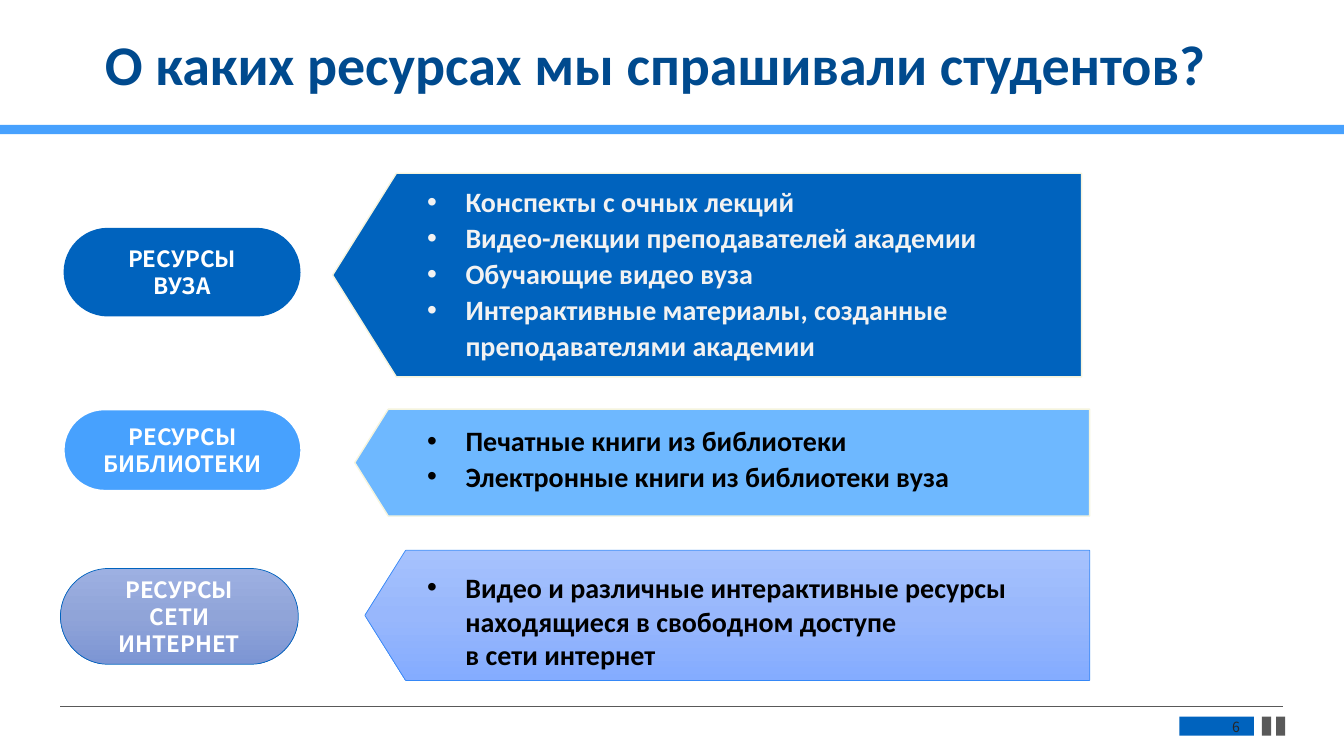
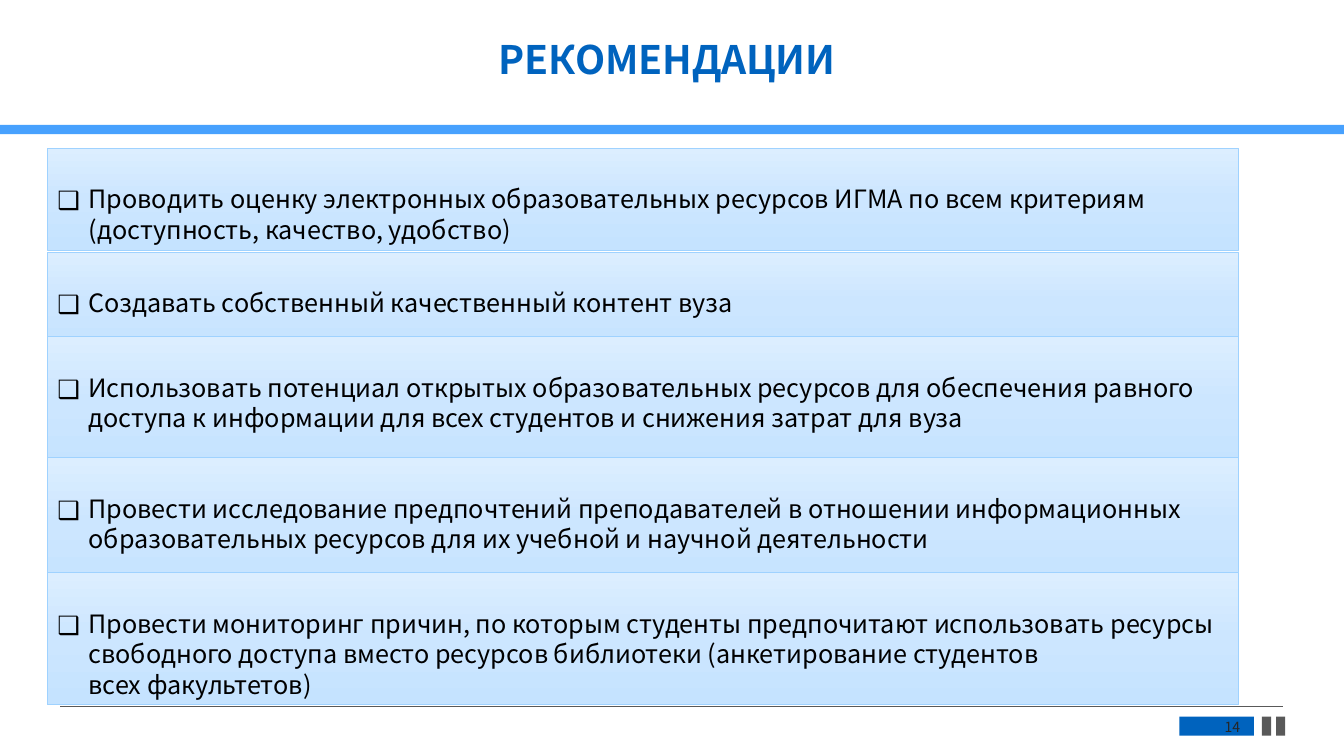
"""Two slides on study resources: what was asked and what is advised."""
from copy import deepcopy
from dataclasses import dataclass

from lxml.etree import SubElement as sub
from pptx import Presentation
from pptx.dml.color import RGBColor
from pptx.enum.shapes import MSO_CONNECTOR as Line, MSO_SHAPE as Kind
from pptx.enum.text import MSO_ANCHOR as Anchor, PP_ALIGN as Align
from pptx.oxml.ns import qn
from pptx.util import Inches, Pt

WIDE, HIGH = Inches(13.333), Inches(7.5)
SANS, BODY = "Noto Sans CJK SC", "Calibri"
BLUE, SKY, NAVY, PALE = "0063BE", "47A1FE", "004A8E", "6EB8FF"
GRAY, DARK, WHITE, BLACK = "595959", "262626", "FFFFFF", "000000"
CREAM = "F5F4DD"
PITCH = 1.21


@dataclass(frozen=True)
class Box:
    """Place and size in percent of the slide's width and height."""
    x: float
    y: float
    w: float
    h: float

    def emu(self) -> tuple[int, int, int, int]:
        return (across(self.x), down(self.y), across(self.w), down(self.h))


@dataclass(frozen=True)
class Look:
    """Fill (one colour or three gradient stops) and outline."""
    fill: str | tuple[str, ...]
    line: str | None = None
    width: float = 1


@dataclass(frozen=True)
class Group:
    """One kind of resource: pill, arrow and list."""
    pill: Box
    tone: Look
    name: tuple[str, ...]
    arrow: Box
    look: Look
    area: Box
    items: tuple[str, ...]
    color: str = BLACK
    space: float = 1.07


@dataclass(frozen=True)
class Card:
    """One piece of advice with its top and height."""
    y: float
    h: float
    text: str


GROUPS = (
    Group(Box(4.73, 30.13, 17.63, 11.73), Look(BLUE), ("РЕСУРСЫ", "ВУЗА"),
          Box(24.75, 22.93, 55.73, 26.93), Look(BLUE, CREAM),
          Box(31.05, 23.47, 50, 25.33),
          ("Конспекты с очных лекций",
           "Видео-лекции преподавателей академии",
           "Обучающие видео вуза",
           "Интерактивные материалы, созданные преподавателями академии"),
          "F2F2F2"),
    Group(Box(4.73, 54.13, 17.7, 10.8), Look(SKY, WHITE, 1.5),
          ("РЕСУРСЫ", "БИБЛИОТЕКИ"),
          Box(26.4, 54.13, 54.68, 14.13), Look(PALE, CREAM),
          Box(31.05, 55.07, 50, 10.93),
          ("Печатные книги из библиотеки",
           "Электронные книги из библиотеки вуза")),
    Group(Box(4.5, 75.2, 17.7, 12.67),
          Look(("9DB0E2", "90A4D8", "7C95D4"), BLUE, 0.5),
          ("РЕСУРСЫ", "СЕТИ", "ИНТЕРНЕТ"),
          Box(27.15, 72.8, 53.93, 17.2),
          Look(("A6C2FD", "98B7FC", "84ACFF"), "3688F7", 0.5),
          Box(31.05, 74.8, 51.75, 14.8),
          ("Видео и различные интерактивные ресурсы находящиеся "
           "в свободном доступе\vв сети интернет",), space=1),
)

CARDS = (
    Card(19.6, 13.47, "Проводить оценку электронных образовательных ресурсов "
         "ИГМА по всем критериям (доступность, качество, удобство)"),
    Card(33.33, 13.47, "Создавать собственный качественный контент вуза"),
    Card(44.53, 17.47, "Использовать потенциал открытых образовательных "
         "ресурсов для обеспечения равного доступа к информации для всех "
         "студентов и снижения затрат для вуза"),
    Card(60.53, 17.47, "Провести исследование предпочтений преподавателей "
         "в отношении информационных образовательных ресурсов для их "
         "учебной и научной деятельности"),
    Card(75.73, 17.47, "Провести мониторинг причин, по которым студенты "
         "предпочитают использовать ресурсы свободного доступа вместо "
         "ресурсов библиотеки (анкетирование студентов\vвсех факультетов)"),
)
ICE = Look(("DCEEFF", "CCE6FF", "C5E3FF"), "9FD2FF", 0.5)


def across(part: float) -> int:
    return round(WIDE * part / 100)


def down(part: float) -> int:
    return round(HIGH * part / 100)


def rgb(code: str) -> RGBColor:
    return RGBColor.from_string(code)


def paint(shape, look: Look) -> None:
    fill = shape.fill
    if isinstance(look.fill, str):
        fill.solid()
        fill.fore_color.rgb = rgb(look.fill)
    else:
        fill.gradient()
        fill.gradient_angle = 270
        stops = shape._element.spPr.find(qn("a:gradFill")).find(qn("a:gsLst"))
        stops.insert(1, deepcopy(stops[0]))
        for num, (stop, code) in enumerate(zip(fill.gradient_stops, look.fill)):
            stop.position = num / 2
            stop.color.rgb = rgb(code)
    if look.line:
        shape.line.color.rgb = rgb(look.line)
        shape.line.width = Pt(look.width)
    else:
        shape.line.fill.background()


def form(slide, kind: Kind, box: Box, look: Look, bend: float | None = None):
    shape = slide.shapes.add_shape(kind, *box.emu())
    shape.shadow.inherit = False
    paint(shape, look)
    if bend is not None:
        shape.adjustments[0] = bend
    return shape


def mark(para, sign: str, hang: float) -> None:
    props = para._p.get_or_add_pPr()
    props.set("marL", str(Inches(hang)))
    props.set("indent", str(-Inches(hang)))
    sub(props, qn("a:buFont")).set("typeface", "Arial" if sign == "•" else SANS)
    sub(props, qn("a:buChar")).set("char", sign)


def write(shape, *lines: str, size: float, color: str, font: str = SANS,
          bold: bool = False, align: Align = Align.LEFT,
          anchor: Anchor = Anchor.TOP, sign: str = "", hang: float = 0,
          space: float = 1, top: float = 0.05) -> None:
    frame = shape.text_frame
    frame.word_wrap = True
    frame.vertical_anchor = anchor
    frame.margin_top = Inches(top)
    for num, line in enumerate(lines):
        para = frame.add_paragraph() if num else frame.paragraphs[0]
        para.text = line
        if sign:
            mark(para, sign, hang)
        para.alignment = align
        para.line_spacing = Pt(size * PITCH) if font == SANS else space
        for run in para.runs:
            run.font.name = font
            run.font.size = Pt(size)
            run.font.bold = bold
            run.font.color.rgb = rgb(color)


def label(slide, box: Box, *lines: str, **style) -> None:
    write(slide.shapes.add_textbox(*box.emu()), *lines, **style)


def start(deck, num: int):
    slide = deck.slides.add_slide(deck.slide_layouts[6])
    form(slide, Kind.RECTANGLE, Box(0, 16.53, 100, 1.2), Look(SKY))
    rule = slide.shapes.add_connector(
        Line.STRAIGHT, across(4.5), down(93.47), across(95.48), down(93.47))
    rule.line.color.rgb = rgb(GRAY)
    rule.line.width = Pt(0.5)
    sub(rule._element.spPr, qn("a:effectLst"))
    for x, w, code in ((87.75, 5.55, BLUE), (93.9, 0.68, GRAY), (94.95, 0.68, GRAY)):
        form(slide, Kind.RECTANGLE, Box(x, 94.8, w, 2.53), Look(code))
    label(slide, Box(88.05, 95.07, 4.95, 2.27), str(num), size=10, color=DARK,
          align=Align.RIGHT, anchor=Anchor.MIDDLE)
    return slide


def title(slide, box: Box, text: str, **style) -> None:
    label(slide, box, text, bold=True, align=Align.CENTER, **style)


def survey(deck) -> None:
    slide = start(deck, 6)
    title(slide, Box(4.5, 3.2, 88.5, 10.27),
          "О каких ресурсах мы спрашивали студентов?",
          size=40, color=NAVY, font=BODY)
    for group in GROUPS:
        arrow = form(slide, Kind.PENTAGON, group.arrow, group.look, 0.313)
        arrow._element.spPr.find(qn("a:xfrm")).set("flipH", "1")
        pill = form(slide, Kind.ROUNDED_RECTANGLE, group.pill, group.tone, 0.5)
        write(pill, *group.name, size=16, color=WHITE, bold=True,
              align=Align.CENTER, anchor=Anchor.MIDDLE)
        label(slide, group.area, *group.items, size=20, color=group.color,
              font=BODY, bold=True, sign="•", hang=0.38, space=group.space)


def advice(deck) -> None:
    slide = start(deck, 14)
    title(slide, Box(0, 4, 99.23, 7.6), "РЕКОМЕНДАЦИИ", size=28, color=BLUE)
    for card in CARDS:
        shape = form(slide, Kind.RECTANGLE, Box(3.53, card.y, 88.65, card.h), ICE)
        write(shape, card.text, size=18, color=BLACK, sign="❑", hang=0.31, top=0.35)


def main() -> None:
    deck = Presentation()
    deck.slide_width, deck.slide_height = WIDE, HIGH
    survey(deck)
    advice(deck)
    deck.save("out.pptx")


if __name__ == "__main__":
    main()
